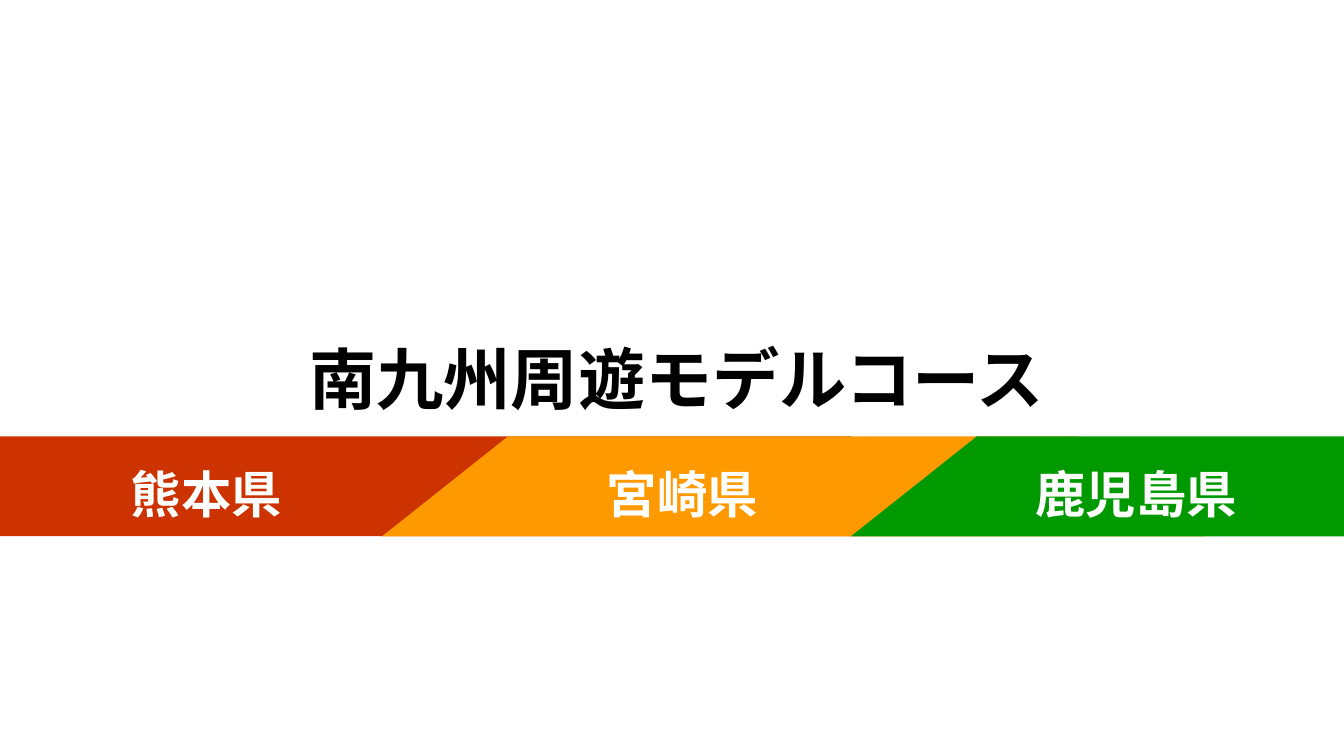
from pptx import Presentation
from pptx.util import Inches, Pt
from pptx.dml.color import RGBColor
from pptx.enum import shapes, text
from lxml import etree

FONT = "Noto Sans CJK JP"
COLORS = {"red": "CC3300", "orange": "FF9900", "green": "009900",
          "black": "000000", "white": "FFFFFF"}

# Content: prefecture, band colour, band left and width, label left and width
TITLE = "南九州周遊モデルコース"
PREFECTURES = [
    ("熊本県", "red", -0.32, 8.76, 1.2, 1.72),
    ("宮崎県", "orange", 3.79, 8.15, 5.92, 1.72),
    ("鹿児島県", "green", 8.44, 6.48, 10.17, 2.22),
]
BAND_TOP, BAND_HEIGHT = 4.33, 0.99
LABEL_TOP, LABEL_HEIGHT = 4.54, 0.71
SLANT = 1.26  # run of the sloping side over the band height

prs = Presentation()
prs.slide_width, prs.slide_height = Inches(13.33), Inches(7.5)
s = prs.slides.add_slide(prs.slide_layouts[6])


def add_text(words, x, y, w, h, size=36, color="white"):
    sp = s.shapes.add_textbox(Inches(x), Inches(y), Inches(w), Inches(h))
    tf = sp.text_frame
    tf.word_wrap = False
    tf.auto_size = text.MSO_AUTO_SIZE.SHAPE_TO_FIT_TEXT
    r = tf.paragraphs[0].add_run()
    r.text = words
    r.font.name, r.font.size, r.font.bold = FONT, Pt(size), True
    r.font.color.rgb = RGBColor.from_string(COLORS[color])
    # East Asian typeface
    latin = r.font._element.find("{*}latin")
    ea = etree.Element(latin.tag.replace("latin", "ea"), typeface=FONT)
    latin.addnext(ea)


# Overlapping bands: a rectangle first, then trapezoids
for i, (name, color, x, w, *label) in enumerate(PREFECTURES):
    kind = shapes.MSO_SHAPE.TRAPEZOID if i else shapes.MSO_SHAPE.RECTANGLE
    sp = s.shapes.add_shape(kind, Inches(x), Inches(BAND_TOP),
                            Inches(w), Inches(BAND_HEIGHT))
    if i:
        sp.adjustments[0] = SLANT
    sp.shadow.inherit = False
    sp.fill.solid()
    sp.fill.fore_color.rgb = RGBColor.from_string(COLORS[color])
    sp.line.fill.background()

# Title and prefecture names
add_text(TITLE, 2.97, 3.3, 7.61, 0.91, size=48, color="black")
for name, color, x, w, label_x, label_w in PREFECTURES:
    add_text(name, label_x, LABEL_TOP, label_w, LABEL_HEIGHT)

prs.save("out.pptx")
